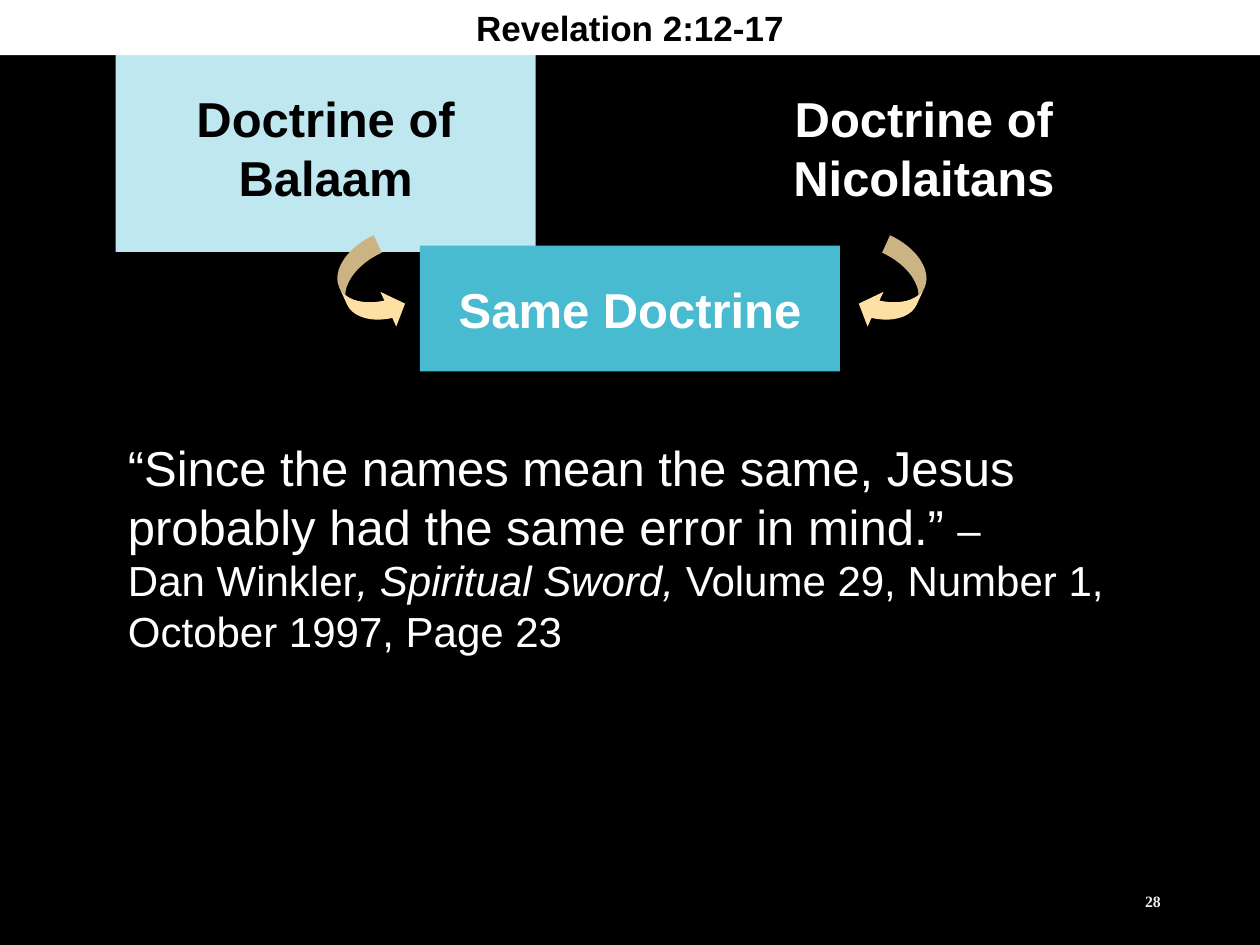
import pptx
import pptx.dml.color
import pptx.enum.shapes
import pptx.enum.text
import pptx.util

Cm = pptx.util.Cm
RGBColor = pptx.dml.color.RGBColor
Align = pptx.enum.text.PP_ALIGN
Anchor = pptx.enum.text.MSO_ANCHOR
Shape = pptx.enum.shapes.MSO_SHAPE

BLACK = RGBColor(0x00, 0x00, 0x00)
WHITE = RGBColor(0xFF, 0xFF, 0xFF)
PALE_BLUE = RGBColor(0xBF, 0xE7, 0xEF)
TEAL = RGBColor(0x49, 0xBB, 0xD1)
SAND = RGBColor(0xFE, 0xE0, 0xA4)
LIGHT_GREY = RGBColor(0xED, 0xED, 0xED)

PAGE_WIDTH, PAGE_HEIGHT = 25.4, 19.05
LABEL_WIDTH = 8.47
MARGIN = 2.33


class DoctrinePage:
    def __init__(self, deck):
        self.font = "Arial"
        self.page = deck.slides.add_slide(deck.slide_layouts[5])
        self.page.background.fill.solid()
        self.page.background.fill.fore_color.rgb = BLACK

    def style(self, span, size, color, bold=False, italic=False, font=None):
        span.font.name = font or self.font
        span.font.size = pptx.util.Pt(size)
        span.font.bold = bold
        span.font.italic = italic
        span.font.color.rgb = color

    def paint(self, shape, color):
        shape.fill.solid()
        shape.fill.fore_color.rgb = color
        shape.line.fill.background()

    def set_text(self, box, text, size, color, align=Align.CENTER, font=None):
        box.text_frame.text = text
        box.text_frame.vertical_anchor = Anchor.MIDDLE
        for para in box.text_frame.paragraphs:
            para.alignment = align
            for span in para.runs:
                self.style(span, size, color, bold=True, font=font)

    def title(self, text, height):
        bar = self.page.shapes.title
        bar.left, bar.top = 0, 0
        bar.width, bar.height = Cm(PAGE_WIDTH), Cm(height)
        self.paint(bar, WHITE)
        self.set_text(bar, text, 20, BLACK)
        # The bar overlaps the tops of the labels, so it goes to the front.
        self.page.shapes._spTree.append(bar._element)

    def shape(self, kind, left, top, width, height, color):
        shape = self.page.shapes.add_shape(
            kind, Cm(left), Cm(top), Cm(width), Cm(height))
        shape.shadow.inherit = False
        self.paint(shape, color)
        return shape

    def label(self, text, left, top, height, fill, color):
        box = self.shape(Shape.RECTANGLE, left, top, LABEL_WIDTH, height, fill)
        self.set_text(box, text, 28, color)
        box.text_frame.word_wrap = False

    def curved_arrow(self, left, rotation, mirrored=False):
        arrow = self.shape(Shape.CURVED_RIGHT_ARROW, left, 4.88, 1.07, 1.9, SAND)
        for index, value in enumerate((0.36, 0.72, 0.33)):
            arrow.adjustments[index] = value
        arrow.rotation = rotation
        if mirrored:
            arrow._element.spPr.xfrm.set("flipH", "1")

    def text_box(self, left, top, width, height):
        box = self.page.shapes.add_textbox(Cm(left), Cm(top), Cm(width), Cm(height))
        box.text_frame.word_wrap = True
        return box

    def quote(self, words, source):
        """Set the quoted words, then the source as (text, italic) pairs."""
        box = self.text_box(MARGIN, 8.69, PAGE_WIDTH - MARGIN - 2.54, 4.7)
        para = box.text_frame.paragraphs[0]
        para.alignment = Align.LEFT
        for text, size in ((words, 28), ("–", 24)):
            span = para.add_run()
            span.text = text
            self.style(span, size, WHITE)
        para.add_line_break()
        for text, italic in source:
            span = para.add_run()
            span.text = text
            self.style(span, 24, WHITE, italic=italic)

    def page_number(self, text):
        box = self.text_box(17.93, 17.65, 5.72, 1.02)
        self.set_text(box, text, 9, LIGHT_GREY, Align.RIGHT, "Times New Roman")


def main():
    deck = pptx.Presentation()
    deck.slide_width, deck.slide_height = Cm(PAGE_WIDTH), Cm(PAGE_HEIGHT)
    page = DoctrinePage(deck)
    page.label("Doctrine of\nBalaam", MARGIN, 0.85, 4.23, PALE_BLUE, BLACK)
    page.label("Doctrine of\nNicolaitans", 14.39, 0.85, 4.23, BLACK, WHITE)
    page.label("Same Doctrine", (PAGE_WIDTH - LABEL_WIDTH) / 2, 4.95, 2.54, TEAL, WHITE)
    page.curved_arrow(6.91, 335.4)
    page.curved_arrow(17.5, 24.6, mirrored=True)
    page.quote(
        "“Since the names mean the same, Jesus probably had the same error in mind.” ",
        (("Dan Winkler", False), (", Spiritual Sword, ", True),
         ("Volume 29, Number 1, October 1997, Page 23", False)))
    page.title("Revelation 2:12-17", 1.11)
    page.page_number("28")
    deck.save("out.pptx")


if __name__ == "__main__":
    main()
